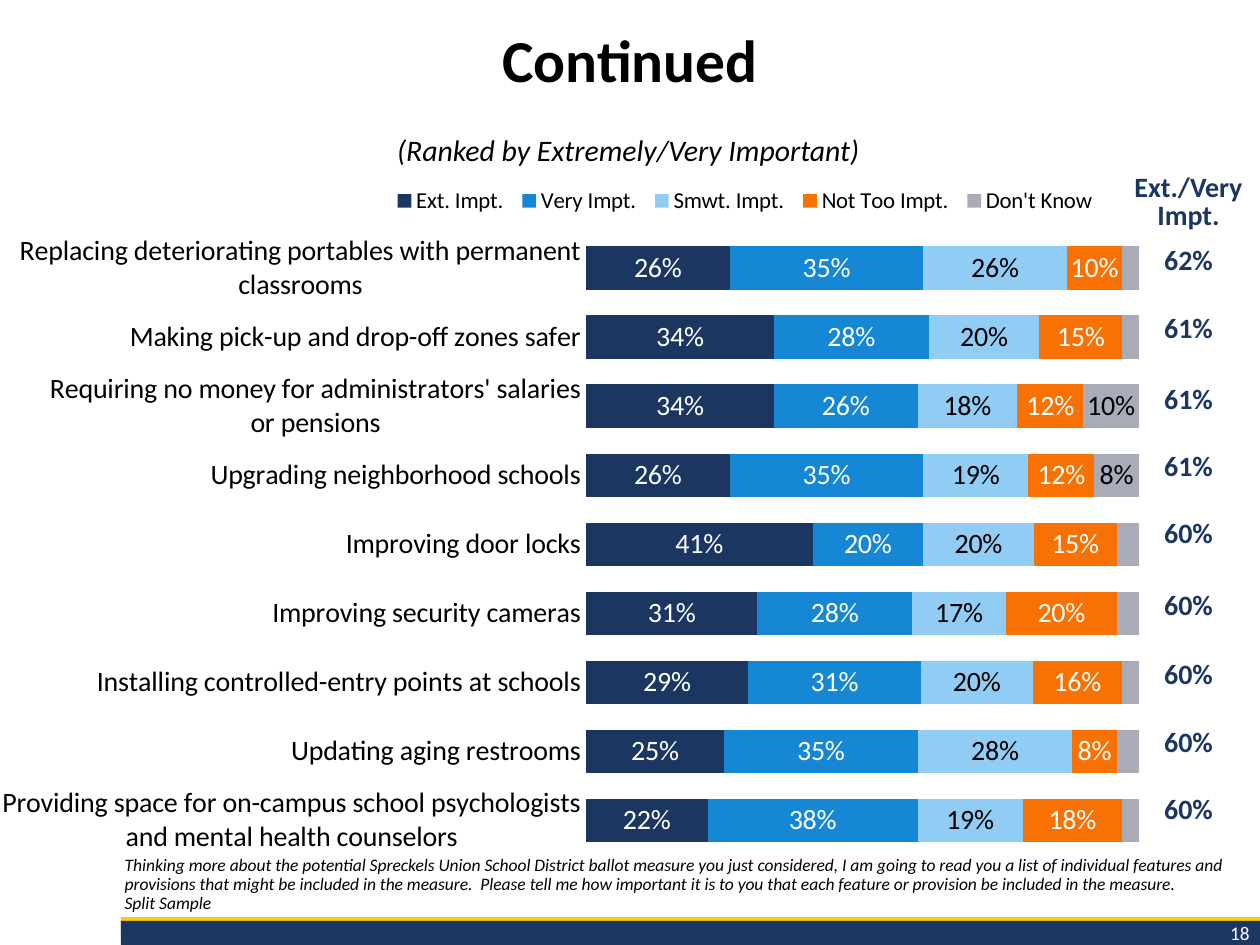
from lxml.etree import SubElement
from pptx import Presentation
from pptx.chart.data import CategoryChartData
from pptx.dml.color import RGBColor
from pptx.enum.chart import (
    XL_CHART_TYPE as ChartType,
    XL_LABEL_POSITION as LabelPosition,
    XL_LEGEND_POSITION as LegendPosition,
    XL_TICK_MARK as TickMark,
)
from pptx.enum.shapes import MSO_SHAPE as Preset
from pptx.enum.text import MSO_ANCHOR as Anchor, MSO_AUTO_SIZE as AutoSize, PP_ALIGN as Align
from pptx.oxml.ns import qn
from pptx.util import Emu, Pt

COLORS = {
    "navy": "1B3660",
    "footer": "1B3661",
    "gold": "FCCA09",
    "blue": "1587D4",
    "sky": "91CCF4",
    "orange": "F97103",
    "gray": "A9ABB8",
    "black": "000000",
    "white": "FFFFFF",
}
NO_GRID_STYLE = "{2D5ABB26-0587-4C30-8999-92F81FD0307C}"

FEATURES = [
    "Replacing deteriorating portables with permanent classrooms",
    "Making pick-up and drop-off zones safer",
    "Requiring no money for administrators' salaries\nor pensions",
    "Upgrading neighborhood schools",
    "Improving door locks",
    "Improving security cameras",
    "Installing controlled-entry points at schools",
    "Updating aging restrooms",
    "Providing space for on-campus school psychologists and mental health counselors",
]
RATINGS = [
    ("Ext. Impt.", "navy", "white", [0.26, 0.34, 0.34, 0.26, 0.41, 0.31, 0.29, 0.25, 0.22]),
    ("Very Impt.", "blue", "white", [0.35, 0.28, 0.26, 0.35, 0.2, 0.28, 0.31, 0.35, 0.38]),
    ("Smwt. Impt.", "sky", "black", [0.26, 0.2, 0.18, 0.19, 0.2, 0.17, 0.2, 0.28, 0.19]),
    ("Not Too Impt.", "orange", "white", [0.1, 0.15, 0.12, 0.12, 0.15, 0.2, 0.16, 0.08, 0.18]),
    ("Don't Know", "gray", "black", [0.03, 0.03, 0.1, 0.08, 0.04, 0.04, 0.03, 0.04, 0.03]),
]
LABELED_DONT_KNOW = {"Don't Know": [2, 3]}
TOTALS = ["Ext./Very Impt.", "62%", "61%", "61%", "61%", "60%", "60%", "60%", "60%", "60%"]
TOTAL_HEIGHTS = [58, 45, 68, 71, 67, 67, 72, 69, 68, 67]
QUESTION = [
    "Thinking more about the potential Spreckels Union School District ballot measure you just "
    "considered, I am going to read you a list of individual features and provisions that might be "
    "included in the measure.  Please tell me how important it is to you that each feature or "
    "provision be included in the measure.",
    "Split Sample",
]


def px(length):
    return Emu(round(length * 914400 / 126))


def rgb(color):
    return RGBColor.from_string(COLORS[color])


class SlideBuilder:
    font_name = "Calibri"

    def __init__(self, slide):
        self.slide = slide

    def style(self, font, size, color="black", bold=False, italic=False):
        font.name, font.size = self.font_name, Pt(size)
        font.bold, font.italic = bold, italic
        font.color.rgb = rgb(color)

    def add_lines(self, frame, lines, size, align=Align.LEFT, spacing=None, **look):
        paragraph = frame.paragraphs[0]
        paragraph.alignment, paragraph.line_spacing = align, spacing
        paragraph.space_before = Pt(0)
        for index, line in enumerate(lines):
            if index:
                paragraph.add_line_break()
            run = paragraph.add_run()
            run.text = line
            self.style(run.font, size, **look)

    def band(self, box, color):
        band = self.slide.shapes.add_shape(Preset.RECTANGLE, *map(px, box))
        band.shadow.inherit = False
        band.fill.solid()
        band.fill.fore_color.rgb = rgb(color)
        band.line.fill.background()

    def text(self, box, line, size, align, **look):
        frame = self.slide.shapes.add_textbox(*map(px, box)).text_frame
        frame.word_wrap = True
        self.add_lines(frame, [line], size, align, **look)

    def placeholder(self, index, box, lines, size, align, anchor, **look):
        holder = self.slide.placeholders[index]
        holder.left, holder.top, holder.width, holder.height = map(px, box)
        frame = holder.text_frame
        frame.auto_size, frame.vertical_anchor = AutoSize.NONE, anchor
        properties = frame.paragraphs[0]._p.get_or_add_pPr()
        properties.set("marL", "0")
        properties.set("indent", "0")
        SubElement(properties, qn("a:buNone"))
        self.add_lines(frame, lines, size, align, 0.9, **look)

    def place(self, part, x, y, w, h, inner=False):
        for old in part.findall(qn("c:layout")):
            part.remove(old)
        layout = part.makeelement(qn("c:layout"), {})
        manual = SubElement(layout, qn("c:manualLayout"))
        settings = [("layoutTarget", "inner")] if inner else []
        settings += [("xMode", "edge"), ("yMode", "edge"), ("x", x), ("y", y), ("w", w), ("h", h)]
        for tag, value in settings:
            SubElement(manual, qn(f"c:{tag}"), val=str(value))
        if inner:
            part.insert(0, layout)
        else:
            part.find(qn("c:legendPos")).addnext(layout)

    def label_series(self, series, color, points):
        labels = series.data_labels
        labels.show_value = points is None
        labels.number_format, labels.number_format_is_linked = "0%", False
        labels.position = LabelPosition.CENTER
        self.style(labels.font, 16, color)
        for point in points or []:
            label = series.points[point].data_label
            self.style(label.font, 16, color)
            label.position = LabelPosition.CENTER

    def stacked_bars(self, box, categories, ratings, partial_labels):
        data = CategoryChartData(number_format="0%")
        data.categories = categories
        for name, _, _, values in ratings:
            data.add_series(name, values)
        chart = self.slide.shapes.add_chart(ChartType.BAR_STACKED_100, *map(px, box), data).chart
        self.style(chart.font, 18)
        chart.has_title = False
        chart.has_legend = True
        chart.legend.position = LegendPosition.TOP
        chart.legend.include_in_layout = False
        self.style(chart.legend.font, 13)
        self.place(chart.legend._element, 0.33, 0.02, 0.61, 0.05)
        plot = chart.plots[0]
        plot.gap_width, plot.overlap, plot.vary_by_categories = 58, 100, False
        self.place(chart._chartSpace.chart.plotArea, 0.5, 0.09, 0.47, 0.85, inner=True)
        features, shares = chart.category_axis, chart.value_axis
        features.reverse_order = True
        features.major_tick_mark = features.minor_tick_mark = TickMark.NONE
        features.format.line.fill.background()
        self.style(features.tick_labels.font, 16)
        shares.minimum_scale, shares.maximum_scale, shares.major_unit = 0, 1, 0.2
        shares.has_major_gridlines = shares.visible = False
        for series, (name, fill, label_color, _) in zip(plot.series, ratings):
            series.format.fill.solid()
            series.format.fill.fore_color.rgb = rgb(fill)
            self.label_series(series, label_color, partial_labels.get(name))

    def column(self, left, top, width, entries, heights):
        box = map(px, (left, top, width, sum(heights)))
        table = self.slide.shapes.add_table(len(entries), 1, *box).table
        table.first_row = table.horz_banding = False
        table._tbl.tblPr.find(qn("a:tableStyleId")).text = NO_GRID_STYLE
        for index, (entry, height) in enumerate(zip(entries, heights)):
            table.rows[index].height = px(height)
            cell = table.cell(index, 0)
            cell.fill.background()
            cell.vertical_anchor = Anchor.BOTTOM
            cell.margin_left = cell.margin_right = cell.margin_top = px(1)
            cell.margin_bottom = 0
            spacing = None if index else Pt(16)
            self.add_lines(cell.text_frame, [entry], 16, Align.CENTER, spacing, color="navy", bold=True)


def main():
    deck = Presentation()
    deck.slide_width, deck.slide_height = px(1260), px(945)
    page = SlideBuilder(deck.slides.add_slide(deck.slide_layouts[1]))
    page.band((121, 917, 1139, 20), "gold")
    page.band((121, 921, 1139, 24), "footer")
    page.text((1076, 915, 186, 36), "18", 11, Align.RIGHT, color="white")
    page.placeholder(0, (0, 25, 1260, 154), ["Continued"], 34, Align.CENTER, Anchor.TOP, bold=True)
    page.placeholder(1, (112, 852, 1145, 68), QUESTION, 10, Align.LEFT, Anchor.BOTTOM, italic=True)
    page.stacked_bars((-2, 168, 1176, 731), FEATURES, RATINGS, LABELED_DONT_KNOW)
    page.text((0, 126, 1257, 49), "(Ranked by Extremely/Very Important)", 17, Align.CENTER, italic=True)
    page.column(1115, 175, 147, TOTALS, TOTAL_HEIGHTS)
    deck.save("out.pptx")


if __name__ == "__main__":
    main()
